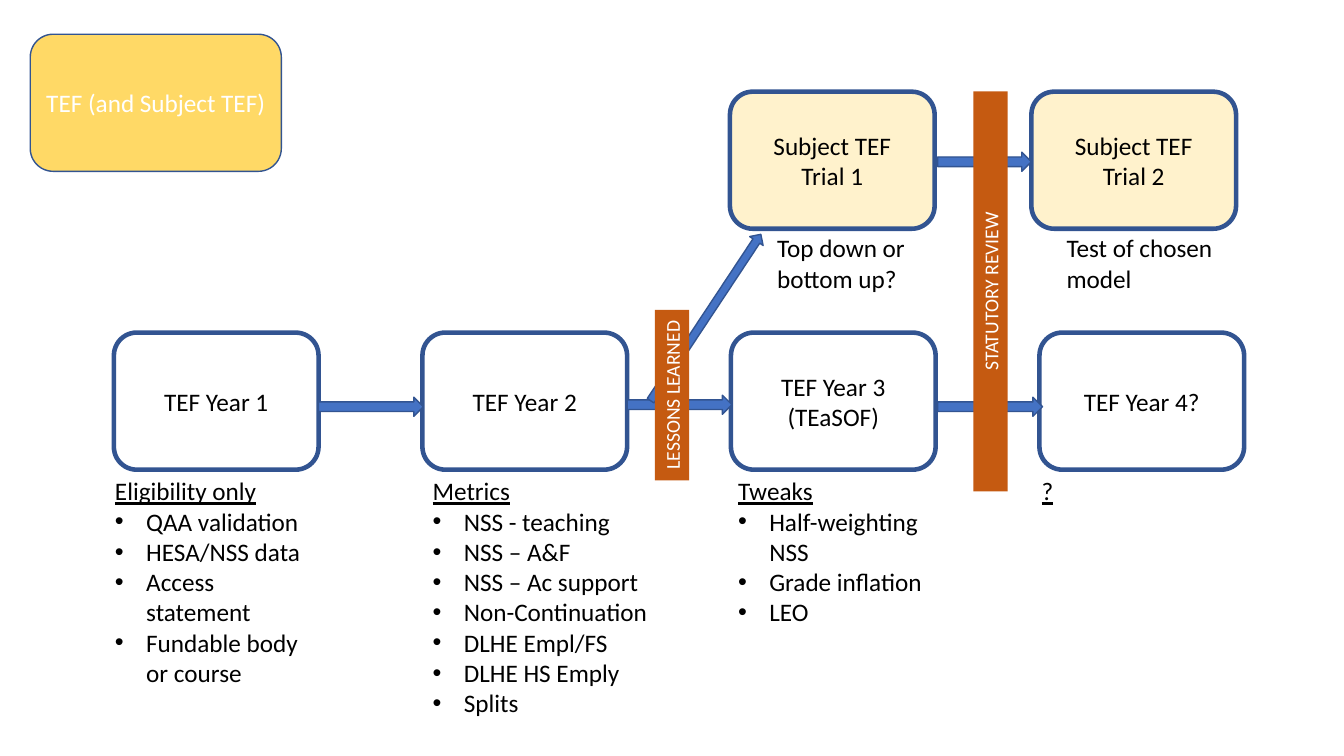
from pptx import Presentation
from pptx.dml.color import RGBColor as Rgb
from pptx.enum.shapes import MSO_SHAPE as Kind
from pptx.enum.text import MSO_ANCHOR as Anchor, MSO_AUTO_SIZE as Auto, PP_ALIGN as Align
from pptx.oxml.ns import qn
from pptx.util import Inches, Pt
from lxml.etree import SubElement as Sub

HUES = {
    "ink": "000000", "white": "FFFFFF", "edge": "325491", "arrow": "4472C4",
    "gold": "FFD966", "cream": "FFF2CC", "rust": "C55A11",
}


class Board:
    font = "Calibri"

    def __init__(self, deck, layout):
        self.slide = deck.slides.add_slide(deck.slide_layouts[layout])
        self.shapes = self.slide.shapes

    def hue(self, name):
        return Rgb.from_string(HUES[name])

    def place(self, shape, spot):
        shape.left, shape.top, shape.width, shape.height = map(Inches, spot)

    def label(self, shape, text, hue="ink", size=18, align=Align.CENTER,
              anchor=Anchor.MIDDLE, wrap=True):
        frame = shape.text_frame
        frame.text = text
        frame.word_wrap = wrap
        frame.auto_size = Auto.NONE
        frame.vertical_anchor = anchor
        for para in frame.paragraphs:
            para.alignment = align
            para.space_before = para.space_after = Pt(0)
            para.line_spacing = 1.0
            for run in para.runs:
                run.font.name = self.font
                run.font.size = Pt(size)
                run.font.bold = False
                run.font.color.rgb = self.hue(hue)
        return frame

    def draw(self, kind, spot, fill, line=1, turn=0):
        shape = self.shapes.add_shape(kind, *map(Inches, spot))
        shape.shadow.inherit = False
        shape.fill.solid()
        shape.fill.fore_color.rgb = self.hue(fill)
        if line:
            shape.line.color.rgb = self.hue("edge")
            shape.line.width = Pt(line)
        else:
            shape.line.fill.background()
        shape.rotation = turn
        return shape

    def title(self, text, spot):
        self.draw(Kind.ROUNDED_RECTANGLE, spot, "gold")
        title = self.shapes.title
        self.place(title, spot)
        self.label(title, text, "white")
        self.shapes.element.append(title.element)

    def stage(self, text, left, top, fill):
        box = self.draw(Kind.ROUNDED_RECTANGLE, (left, top, 2.03, 1.36), fill, 3.25)
        self.label(box, text)

    def arrow(self, left, top, width, height=0.19, turn=0):
        self.draw(Kind.RIGHT_ARROW, (left, top, width, height), "arrow", turn=turn)

    def banner(self, text, spot):
        bar = self.draw(Kind.RECTANGLE, spot, "rust", 0, 270)
        self.label(bar, text, "white", 14, wrap=False)

    def note(self, text, spot):
        box = self.shapes.add_textbox(*map(Inches, spot))
        self.label(box, text, align=Align.LEFT, anchor=Anchor.TOP)

    def points(self, slot, head, items, spot):
        body = self.slide.placeholders[slot]
        self.place(body, spot)
        frame = self.label(body, "\n".join([head, *items]), align=Align.LEFT, anchor=Anchor.TOP)
        for rank, para in enumerate(frame.paragraphs):
            props = para._p.get_or_add_pPr()
            dent = Inches(0.31) if rank else 0
            props.set("marL", str(dent))
            props.set("indent", str(-dent))
            if rank:
                Sub(props, qn("a:buFont"), typeface="Arial")
                Sub(props, qn("a:buChar"), char="•")
            else:
                Sub(props, qn("a:buNone"))
                para.runs[0].font.underline = True


def main():
    deck = Presentation()
    deck.slide_width, deck.slide_height = Inches(13.33), Inches(7.5)
    board = Board(deck, 4)

    board.title("TEF (and Subject TEF)", (0.3, 0.34, 2.49, 1.36))

    years = ["TEF Year 1", "TEF Year 2", "TEF Year 3\n(TEaSOF)", "TEF Year 4?"]
    for rank, year in enumerate(years):
        board.stage(year, 1.13 + 3.06 * rank, 3.3, "white")
    for left, top in [(3.16, 3.94), (6.22, 3.92), (9.3, 3.94)]:
        board.arrow(left, top, 1.04)

    lists = [
        ("Eligibility only", ["QAA validation", "HESA/NSS data", "Access statement",
                              "Fundable body or course"], 1.04, 2.25, 2.52),
        ("Metrics", ["NSS - teaching", "NSS – A&F", "NSS – Ac support", "Non-Continuation",
                     "DLHE Empl/FS", "DLHE HS Emply", "Splits"], 4.19, 2.35, 2.52),
        ("Tweaks", ["Half-weighting NSS", "Grade inflation", "LEO"], 7.22, 2.35, 1.92),
        ("?", [], 10.23, 2.35, 0.4),
    ]
    for slot, (head, items, left, width, height) in enumerate(lists, 1):
        board.points(slot, head, items, (left, 4.67, width, height))

    board.stage("Subject TEF\nTrial 1", 7.24, 0.91, "cream")
    board.stage("Subject TEF\nTrial 2", 10.23, 0.91, "cream")
    board.arrow(6.01, 3.07, 1.98, 0.16, 303.5)
    board.arrow(9.3, 1.51, 0.93)
    board.note("Top down or bottom up?", (7.61, 2.26, 1.5, 0.71))
    board.note("Test of chosen model", (10.48, 2.26, 1.77, 0.71))

    board.banner("LESSONS LEARNED", (5.82, 3.75, 1.69, 0.34))
    board.banner("STATUTORY REVIEW", (7.84, 2.72, 3.97, 0.34))

    deck.save("out.pptx")


if __name__ == "__main__":
    main()
